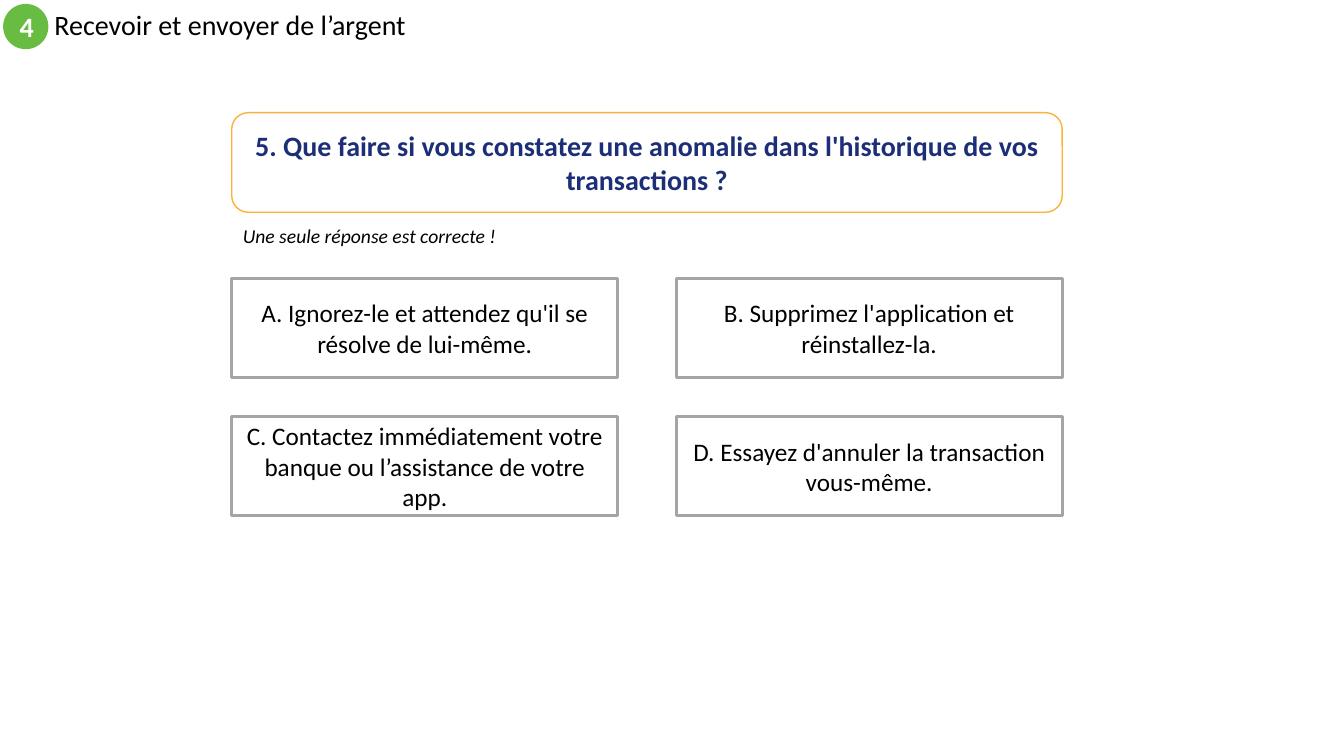
from pptx import Presentation
from pptx.dml.color import RGBColor
from pptx.enum.shapes import MSO_SHAPE
from pptx.enum.text import MSO_ANCHOR, MSO_AUTO_SIZE, PP_ALIGN
from pptx.util import Cm, Pt

ELLIPSE = MSO_SHAPE.OVAL
RECTANGLE = MSO_SHAPE.RECTANGLE
ROUNDED = MSO_SHAPE.ROUNDED_RECTANGLE
MIDDLE = MSO_ANCHOR.MIDDLE
CENTER = PP_ALIGN.CENTER
FIT_SHAPE = MSO_AUTO_SIZE.SHAPE_TO_FIT_TEXT

GREEN = RGBColor(0x68, 0xBC, 0x42)
ORANGE = RGBColor(0xFC, 0xB1, 0x3A)
NAVY = RGBColor(0x1C, 0x2E, 0x78)
GREY = RGBColor(0xA5, 0xA5, 0xA5)
BLACK = RGBColor(0, 0, 0)
WHITE = RGBColor(0xFF, 0xFF, 0xFF)

FONT = "Calibri"
QUIZ_LEFT, QUIZ_WIDTH = 5.84, 20.93
BOX_HEIGHT = 2.51
ANSWER_WIDTH = 9.73
ANSWERS_TOP = 7.01
COLUMN_STEP = QUIZ_WIDTH - ANSWER_WIDTH
ROW_STEP = 3.48

ANSWERS = [
    "A. Ignorez-le et attendez qu'il se résolve de lui-même.",
    "B. Supprimez l'application et réinstallez-la.",
    "C. Contactez immédiatement votre banque ou l’assistance de votre app.",
    "D. Essayez d'annuler la transaction vous-même.",
]


def write(shape, text, size, color=BLACK, bold=False, italic=False):
    """Put one styled paragraph in the shape and return it."""
    shape.text_frame.word_wrap = True
    paragraph = shape.text_frame.paragraphs[0]
    paragraph.text = text
    font = paragraph.font
    font.name, font.size = FONT, Pt(size)
    font.bold, font.italic = bold, italic
    font.color.rgb = color
    return paragraph


def add_box(slide, kind, bounds, text, size, fill=WHITE, line=None,
            line_width=1, color=BLACK, bold=False):
    """Add a filled shape with centred text; bounds are in centimetres."""
    box = slide.shapes.add_shape(kind, *map(Cm, bounds))
    box.shadow.inherit = False
    box.fill.solid()
    box.fill.fore_color.rgb = fill
    if line is None:
        box.line.fill.background()
    else:
        box.line.color.rgb = line
        box.line.width = Pt(line_width)
    box.text_frame.vertical_anchor = MIDDLE
    write(box, text, size, color, bold).alignment = CENTER


def add_header(slide, number, title):
    add_box(slide, ELLIPSE, (0.08, 0.1, 1.14, 1.14), number, 20,
            fill=GREEN, color=WHITE, bold=True)
    heading = slide.shapes.add_textbox(Cm(1.12), Cm(0.1), Cm(20.32), Cm(1.14))
    heading.text_frame.vertical_anchor = MIDDLE
    write(heading, title, 20).line_spacing = 0.9


def add_hint(slide, text):
    hint = slide.shapes.add_textbox(Cm(5.87), Cm(5.51), Cm(8.08), Cm(0.86))
    hint.text_frame.auto_size = FIT_SHAPE
    write(hint, text, 14, italic=True)


def add_answers(slide):
    for index, answer in enumerate(ANSWERS):
        row, column = divmod(index, 2)
        bounds = (QUIZ_LEFT + column * COLUMN_STEP,
                  ANSWERS_TOP + row * ROW_STEP, ANSWER_WIDTH, BOX_HEIGHT)
        add_box(slide, RECTANGLE, bounds, answer, 18, line=GREY, line_width=2)


def main():
    presentation = Presentation()
    presentation.slide_width = Cm(33.87)
    presentation.slide_height = Cm(19.05)
    slide = presentation.slides.add_slide(presentation.slide_layouts[6])

    add_header(slide, "4", "Recevoir et envoyer de l’argent")
    add_box(slide, ROUNDED, (QUIZ_LEFT, 2.84, QUIZ_WIDTH, BOX_HEIGHT),
            "5. Que faire si vous constatez une anomalie dans l'historique "
            "de vos transactions ?", 20, line=ORANGE, color=NAVY, bold=True)
    add_hint(slide, "Une seule réponse est correcte !")
    add_answers(slide)

    presentation.save("out.pptx")


if __name__ == "__main__":
    main()
